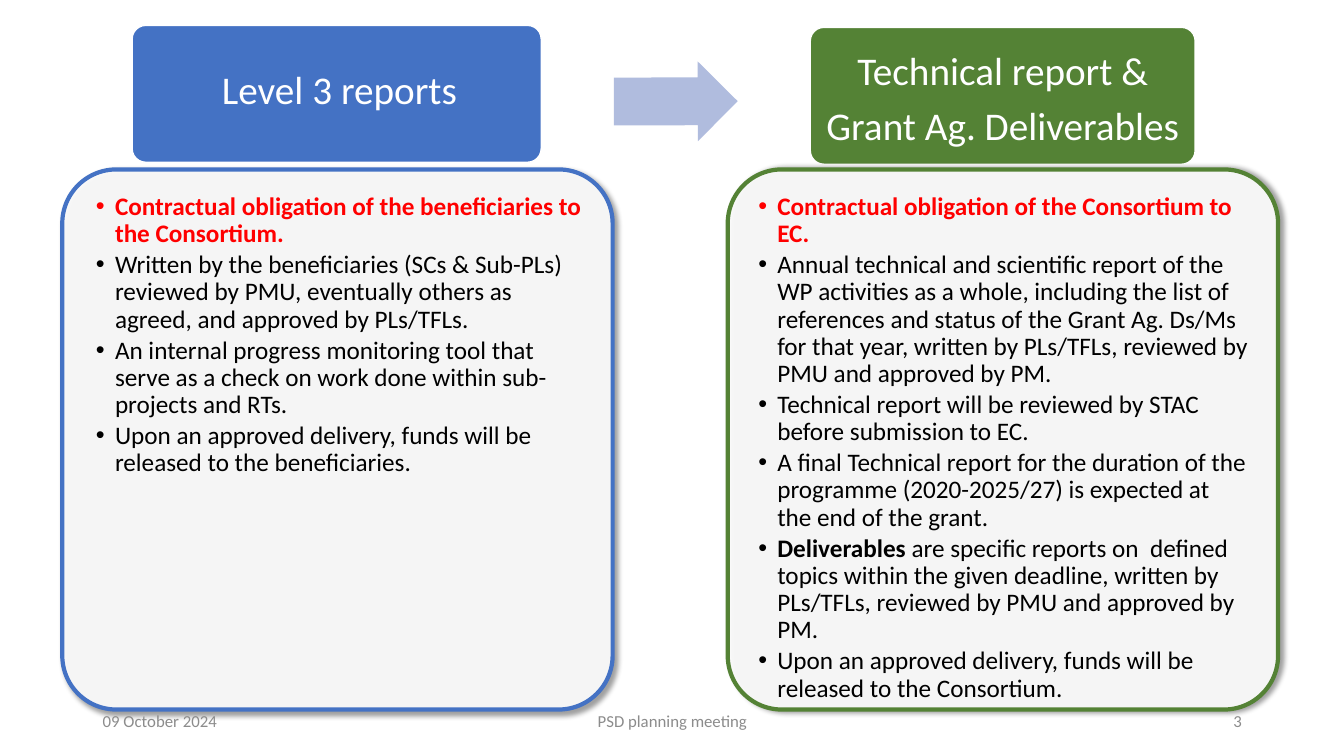
from lxml import etree
from pptx import Presentation
from pptx.dml.color import RGBColor
from pptx.enum.shapes import MSO_SHAPE
from pptx.enum.text import MSO_ANCHOR, PP_ALIGN
from pptx.oxml.ns import qn
from pptx.util import Cm, Pt

ROUNDED, ARROW = MSO_SHAPE.ROUNDED_RECTANGLE, MSO_SHAPE.RIGHT_ARROW
LEFT, CENTER, RIGHT = PP_ALIGN.LEFT, PP_ALIGN.CENTER, PP_ALIGN.RIGHT
TOP, MIDDLE = MSO_ANCHOR.TOP, MSO_ANCHOR.MIDDLE

COLORS = {"blue": "4472C4", "green": "548235", "arrow": "B0BCDE", "white": "FFFFFF",
          "black": "000000", "red": "FF0000", "gray": "8C8C8C"}

# Content: each paragraph is a list of (text, color, bold) runs
COLUMNS = [
    {
        "color": "blue", "shadow_angle": 45,
        "heading": ["Level 3 reports"],
        "heading_box": (3.33, 0.64, 10.31, 3.45),
        "heading_text": (3.4, 1.57, 10.31, 2.31),
        "panel_left": 1.57, "text_left": 2.06,
        "points": [
            [("Contractual obligation of the beneficiaries to the Consortium.", "red", True)],
            [("Written by the beneficiaries (SCs & Sub-PLs) reviewed by PMU, eventually "
              "others as agreed, and approved by PLs/TFLs.", "black", False)],
            [("An internal progress monitoring tool that serve as a check on work done "
              "within sub-projects and RTs.", "black", False)],
            [("Upon an approved delivery, funds will be released to the beneficiaries.",
              "black", False)],
        ],
    },
    {
        "color": "green", "shadow_angle": 0,
        "heading": ["Technical report &", "Grant Ag. Deliverables"],
        "heading_box": (20.42, 0.69, 9.7, 3.45),
        "heading_text": (20.42, 1.09, 9.7, 2.31),
        "panel_left": 18.34, "text_left": 18.75,
        "points": [
            [("Contractual obligation of the Consortium to EC.", "red", True)],
            [("Annual technical and scientific report of the WP activities as a whole, "
              "including the list of references and status of the Grant Ag. Ds/Ms for that "
              "year, written by PLs/TFLs, reviewed by PMU and approved by PM.",
              "black", False)],
            [("Technical report will be reviewed by STAC before submission to EC.",
              "black", False)],
            [("A final Technical report for the duration of the programme (2020-2025/27) "
              "is expected at the end of the grant.", "black", False)],
            [("Deliverables", "black", True),
             (" are specific reports on  defined topics within the given deadline, written "
              "by PLs/TFLs, reviewed by PMU and approved by PM.", "black", False)],
            [("Upon an approved delivery, funds will be released to the Consortium.",
              "black", False)],
        ],
    },
]
FOOTERS = [("09 October 2024", 2.34, 7.62, LEFT),
           ("PSD planning meeting", 11.23, 11.43, CENTER),
           ("3", 23.93, 7.62, RIGHT)]

# Layout in centimetres
PANEL_TOP, PANEL_WIDTH, PANEL_HEIGHT = 4.27, 13.87, 13.61
TEXT_TOP, TEXT_SIZE = 4.52, 13.06
FOOTER_TOP, FOOTER_HEIGHT = 17.65, 1.02
ARROW_BOX = (15.47, 1.55, 3.12, 2.01)
BULLET_INDENT = 0.48

# Text formats; margins run left, top, right, bottom
HEADING = {"size": 28, "margins": (0.2, 0.2, 0.2, 0.1), "anchor": TOP,
           "paragraph": {"alignment": CENTER, "line_spacing": 0.9, "space_after": Pt(9.5)}}
POINTS = {"size": 18, "margins": (0.36,) * 4, "anchor": TOP, "bullet": True,
          "paragraph": {"level": 1, "line_spacing": 0.9, "space_after": Pt(2.7)}}


def rgb(name):
    return RGBColor.from_string(COLORS[name])


def add_shape(slide, kind, box, fill, line=None, width=1, adjustments=(0.1,)):
    shape = slide.shapes.add_shape(kind, *map(Cm, box))
    shape.shadow.inherit = False
    for index, value in enumerate(adjustments):
        shape.adjustments[index] = value
    shape.fill.solid()
    shape.fill.fore_color.rgb = rgb(fill)
    if line:
        shape.line.color.rgb = rgb(line)
        shape.line.width = Pt(width)
    else:
        shape.line.fill.background()
    return shape


def add_alpha(color_element, percent):
    etree.SubElement(color_element, qn("a:alpha"), val=str(percent * 1000))


def add_panel_effects(panel, angle):
    properties = panel.fill._xPr
    add_alpha(properties.find(qn("a:solidFill"))[0], 90)
    shadow = etree.SubElement(properties.find(qn("a:effectLst")), qn("a:outerShdw"),
                              blurRad=str(Pt(4)), dist=str(Pt(3)), dir=str(angle * 60000),
                              algn="ctr", rotWithShape="0")
    color = etree.SubElement(shadow, qn("a:srgbClr"), val=COLORS["black"])
    add_alpha(color, 40)


def add_bullet(paragraph):
    properties = paragraph._p.get_or_add_pPr()
    properties.set("marL", str(Cm(BULLET_INDENT)))
    properties.set("indent", str(-Cm(BULLET_INDENT)))
    etree.SubElement(properties, qn("a:buFont"), typeface="Arial")
    etree.SubElement(properties, qn("a:buChar"), char="•")


def add_text(slide, box, paragraphs, style):
    frame = slide.shapes.add_textbox(*map(Cm, box)).text_frame
    frame.word_wrap = True
    frame.vertical_anchor = style["anchor"]
    for side, margin in zip(("left", "top", "right", "bottom"), style["margins"]):
        setattr(frame, f"margin_{side}", Cm(margin))
    for index, runs in enumerate(paragraphs):
        paragraph = frame.add_paragraph() if index else frame.paragraphs[0]
        for name, value in style["paragraph"].items():
            setattr(paragraph, name, value)
        if style.get("bullet"):
            add_bullet(paragraph)
        for text, color, bold in runs:
            run = paragraph.add_run()
            run.text = text
            run.font.color.rgb = rgb(color)
            for name, value in {"name": "Calibri", "size": Pt(style["size"]),
                                "bold": bold}.items():
                setattr(run.font, name, value)


def main():
    presentation = Presentation()
    presentation.slide_width, presentation.slide_height = Cm(33.87), Cm(19.05)
    slide = presentation.slides.add_slide(presentation.slide_layouts[6])

    # Report columns: heading box above a panel of points
    for column in COLUMNS:
        add_shape(slide, ROUNDED, column["heading_box"], column["color"], "white")
        heading = [[(line, "white", False)] for line in column["heading"]]
        add_text(slide, column["heading_text"], heading, HEADING)
        panel_box = (column["panel_left"], PANEL_TOP, PANEL_WIDTH, PANEL_HEIGHT)
        panel = add_shape(slide, ROUNDED, panel_box, "white", column["color"], 3)
        add_panel_effects(panel, column["shadow_angle"])
        text_box = (column["text_left"], TEXT_TOP, TEXT_SIZE, TEXT_SIZE)
        add_text(slide, text_box, column["points"], POINTS)

    # Arrow between the headings
    arrow = add_shape(slide, ARROW, ARROW_BOX, "arrow", adjustments=(0.6, 0.5))
    arrow.rotation = 359.8

    # Footer line
    for text, left, width, alignment in FOOTERS:
        style = {"size": 12, "margins": (0.25, 0.13, 0.25, 0.13), "anchor": MIDDLE,
                 "paragraph": {"alignment": alignment}}
        add_text(slide, (left, FOOTER_TOP, width, FOOTER_HEIGHT),
                 [[(text, "gray", False)]], style)

    presentation.save("out.pptx")


if __name__ == "__main__":
    main()
